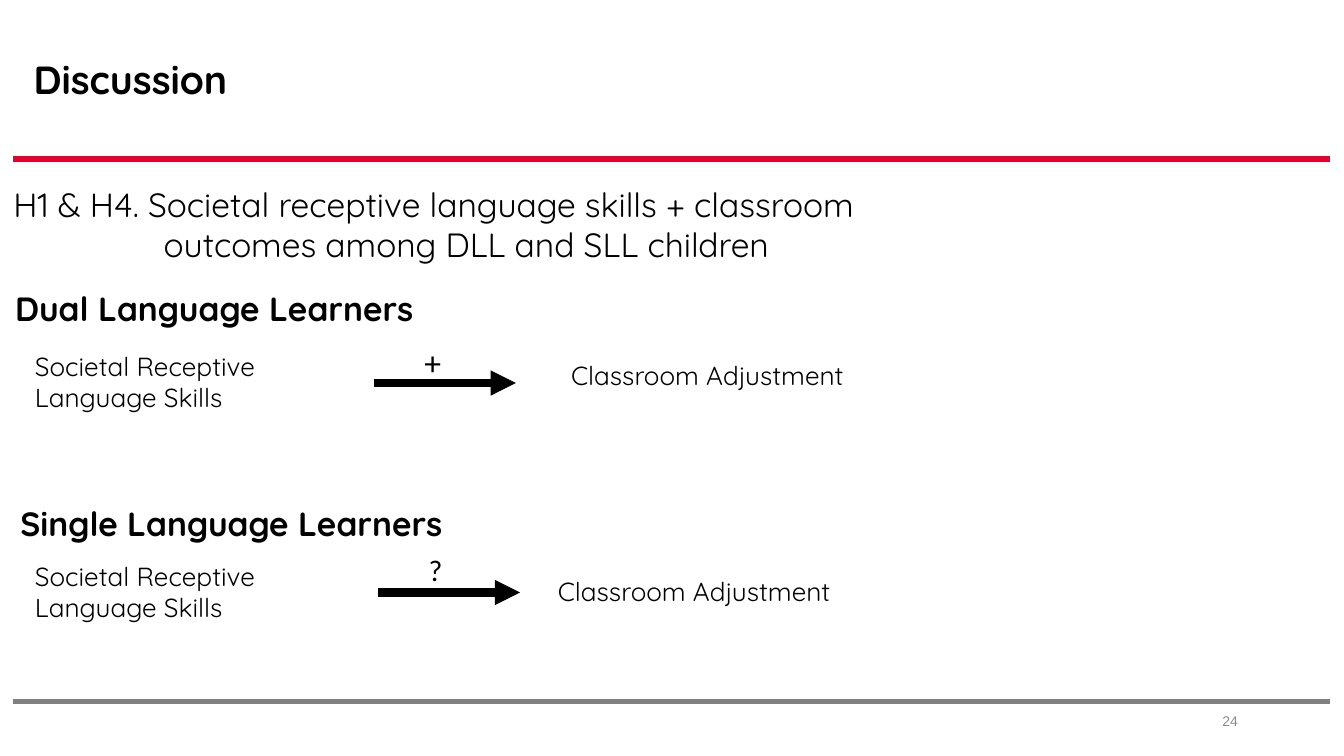
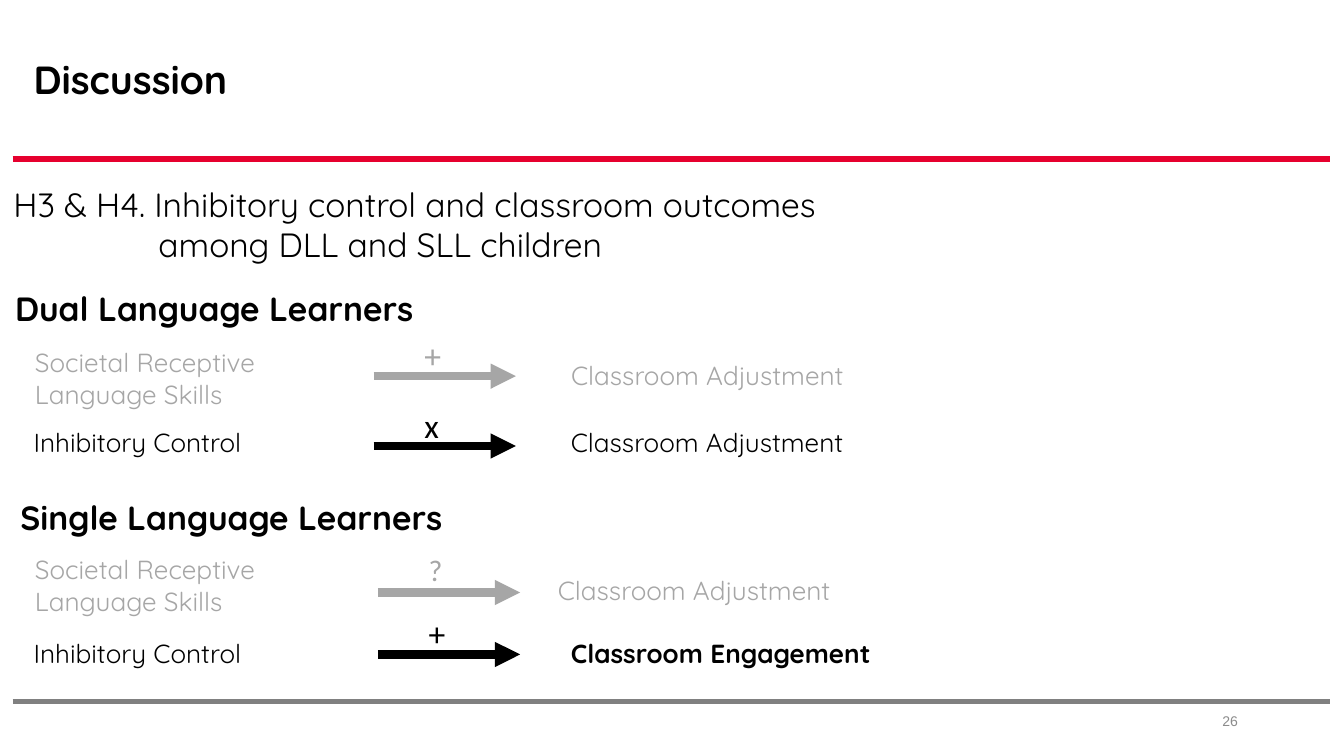
from dataclasses import dataclass

import lxml.etree
import pptx
import pptx.dml.color
import pptx.enum.shapes
import pptx.enum.text
import pptx.oxml.ns
import pptx.presentation
import pptx.shapes.autoshape
import pptx.slide
import pptx.text.text
import pptx.util

Cm = pptx.util.Cm
Pt = pptx.util.Pt
qn = pptx.oxml.ns.qn
Align = pptx.enum.text.PP_ALIGN
Anchor = pptx.enum.text.MSO_ANCHOR


@dataclass(frozen=True)
class Theme:
    ink: str = "000000"
    faded: str = "A6A6A6"
    red: str = "E6002E"
    gray: str = "808080"
    number: str = "8C8C8C"
    text_font: str = "Quicksand"
    mark_font: str = "Calibri"
    number_font: str = "Arial"
    title_size: float = 21
    lead_size: float = 18
    question_size: float = 16
    item_size: float = 14
    number_size: float = 7.5
    rule_width: float = 3
    arrow_width: float = 4.5


THEME = Theme()


@dataclass(frozen=True)
class Area:
    left: float
    top: float
    width: float
    height: float


@dataclass(frozen=True)
class Style:
    size: float
    font: str = THEME.text_font
    color: str = THEME.ink
    bold: bool = False


@dataclass(frozen=True)
class Line:
    text: str
    style: Style
    gap: float = 0
    margin: float = 0
    indent: float = 0


@dataclass(frozen=True)
class Arrow:
    left: float
    level: float
    mark: str
    color: str = THEME.ink
    size: float = THEME.lead_size


@dataclass(frozen=True)
class Rule:
    level: float
    color: str


@dataclass(frozen=True)
class Label:
    top: float
    text: str
    style: Style


@dataclass(frozen=True)
class Page:
    number: str
    body_width: float
    lines: list[Line]
    arrows: list[Arrow]
    skill_tops: tuple[float, float]
    skill_style: Style
    control_outcomes: tuple[Label, ...] = ()


LEAD = Style(THEME.lead_size)
HEADING = Style(THEME.lead_size, bold=True)
ITEM = Style(THEME.item_size)
FADED = Style(THEME.item_size, color=THEME.faded)
STRONG = Style(THEME.item_size, bold=True)

RULES = (Rule(3, THEME.red), Rule(13.26, THEME.gray))
RULE_LEFT, RULE_RIGHT = 0.24, 25.13
TITLE_AREA = Area(0.38, 0.92, 22.15, 1.93)
NUMBER_AREA = Area(17.93, 13.25, 5.72, 0.76)
ARROW_LENGTH = 2.69
DUAL_LEFT, SINGLE_LEFT = 7.06, 7.14
DUAL_OUTCOME, SINGLE_OUTCOME = 10.54, 10.29
HANGING = 2.84


def lead(text: str, indent: float = -HANGING) -> Line:
    return Line(text, LEAD, margin=HANGING, indent=indent)


def heading(text: str, gap: float, margin: float) -> Line:
    return Line(text, HEADING, gap, margin)


def outcome(style: Style, gap: float, margin: float) -> Line:
    return Line("Classroom Adjustment", style, gap, margin)


def control(gap: float) -> Line:
    return Line("Inhibitory Control", ITEM, gap, 0.38)


PAGES = [
    Page(
        "24",
        17.53,
        [
            lead("H1 & H4. Societal receptive language skills + classroom "
                 "outcomes among DLL and SLL children"),
            heading("Dual Language Learners", 12.5, 0.03),
            outcome(ITEM, 16.5, DUAL_OUTCOME),
            heading("Single Language Learners", 60.3, 0.13),
            outcome(ITEM, 17, SINGLE_OUTCOME),
        ],
        [
            Arrow(DUAL_LEFT, 7.24, "+"),
            Arrow(SINGLE_LEFT, 11.2, "?", size=THEME.question_size),
        ],
        (6.5, 10.46),
        ITEM,
    ),
    Page(
        "26",
        17.17,
        [
            lead("H3 & H4. Inhibitory control and classroom outcomes"),
            lead("among DLL and SLL children", -0.1),
            heading("Dual Language Learners", 12.5, 0.03),
            outcome(FADED, 16.5, DUAL_OUTCOME),
            control(19.4),
            heading("Single Language Learners", 21, 0.13),
            outcome(FADED, 19.6, SINGLE_OUTCOME),
            control(17),
        ],
        [
            Arrow(DUAL_LEFT, 7.11, "+", THEME.faded),
            Arrow(SINGLE_LEFT, 11.2, "?", THEME.faded, THEME.question_size),
            Arrow(DUAL_LEFT, 8.43, "x"),
            Arrow(SINGLE_LEFT, 12.37, "+"),
        ],
        (6.43, 10.34),
        FADED,
        (
            Label(7.94, "Classroom Adjustment", ITEM),
            Label(11.93, "Classroom Engagement", STRONG),
        ),
    ),
]


def assign(target: object, values: dict[str, object]) -> None:
    for name, value in values.items():
        setattr(target, name, value)


def rgb(color: str) -> pptx.dml.color.RGBColor:
    return pptx.dml.color.RGBColor.from_string(color)


def fill_para(para: pptx.text.text._Paragraph, line: Line, align: Align) -> None:
    props = para._p.get_or_add_pPr()
    props.set("marL", str(Cm(line.margin)))
    props.set("indent", str(Cm(line.indent)))
    lxml.etree.SubElement(props, qn("a:buNone"))
    assign(para, {"alignment": align, "space_before": Pt(line.gap), "space_after": Pt(0)})
    span = para.add_run()
    span.text = line.text
    style = line.style
    assign(span.font, {"name": style.font, "size": Pt(style.size), "bold": style.bold})
    span.font.color.rgb = rgb(style.color)


def write(
    box: pptx.shapes.autoshape.Shape,
    area: Area,
    lines: list[Line],
    align: Align = Align.LEFT,
    anchor: Anchor = Anchor.TOP,
) -> None:
    assign(box, {name: Cm(getattr(area, name)) for name in ("left", "top", "width", "height")})
    frame = box.text_frame
    assign(frame, {
        "word_wrap": True,
        "auto_size": pptx.enum.text.MSO_AUTO_SIZE.NONE,
        "vertical_anchor": anchor,
    })
    for index, line in enumerate(lines):
        para = frame.add_paragraph() if index else frame.paragraphs[0]
        fill_para(para, line, align)


def add_text(
    slide: pptx.slide.Slide,
    area: Area,
    texts: tuple[str, ...],
    style: Style,
    align: Align = Align.LEFT,
    anchor: Anchor = Anchor.TOP,
) -> None:
    box = slide.shapes.add_textbox(0, 0, 0, 0)
    write(box, area, [Line(text, style) for text in texts], align, anchor)


def add_line(
    slide: pptx.slide.Slide,
    left: float,
    right: float,
    level: float,
    color: str,
    width: float,
    arrowhead: bool = False,
) -> None:
    connector = slide.shapes.add_connector(
        pptx.enum.shapes.MSO_CONNECTOR.STRAIGHT, Cm(left), Cm(level), Cm(right), Cm(level)
    )
    connector.line.width = Pt(width)
    connector.line.color.rgb = rgb(color)
    props = connector._element.spPr
    if arrowhead:
        lxml.etree.SubElement(props.find(qn("a:ln")), qn("a:tailEnd"), type="triangle")
    lxml.etree.SubElement(props, qn("a:effectLst"))


def add_arrow(slide: pptx.slide.Slide, arrow: Arrow) -> None:
    add_line(slide, arrow.left, arrow.left + ARROW_LENGTH, arrow.level,
             arrow.color, THEME.arrow_width, True)
    area = Area(arrow.left + 0.71, arrow.level - 0.9, 0.84, 1.02)
    add_text(slide, area, (arrow.mark,), Style(arrow.size, THEME.mark_font, arrow.color))


def build_page(deck: pptx.presentation.Presentation, page: Page) -> None:
    slide = deck.slides.add_slide(deck.slide_layouts[1])
    title, body = slide.placeholders
    write(title, TITLE_AREA, [Line("Discussion", Style(THEME.title_size, bold=True))])
    write(body, Area(0, 3.35, page.body_width, 10.64), page.lines)
    for rule in RULES:
        add_line(slide, RULE_LEFT, RULE_RIGHT, rule.level, rule.color, THEME.rule_width)
    for arrow in page.arrows:
        add_arrow(slide, arrow)
    for top in page.skill_tops:
        add_text(slide, Area(0.41, top, 5.21, 1.45),
                 ("Societal Receptive", "Language Skills"), page.skill_style)
    for label in page.control_outcomes:
        add_text(slide, Area(DUAL_OUTCOME, label.top, 6.5, 0.9), (label.text,), label.style)
    add_text(slide, NUMBER_AREA, (page.number,),
             Style(THEME.number_size, THEME.number_font, THEME.number),
             Align.RIGHT, Anchor.MIDDLE)


def main() -> None:
    deck = pptx.Presentation()
    assign(deck, {"slide_width": Cm(25.4), "slide_height": Cm(14.29)})
    for page in PAGES:
        build_page(deck, page)
    deck.save("out.pptx")


if __name__ == "__main__":
    main()
